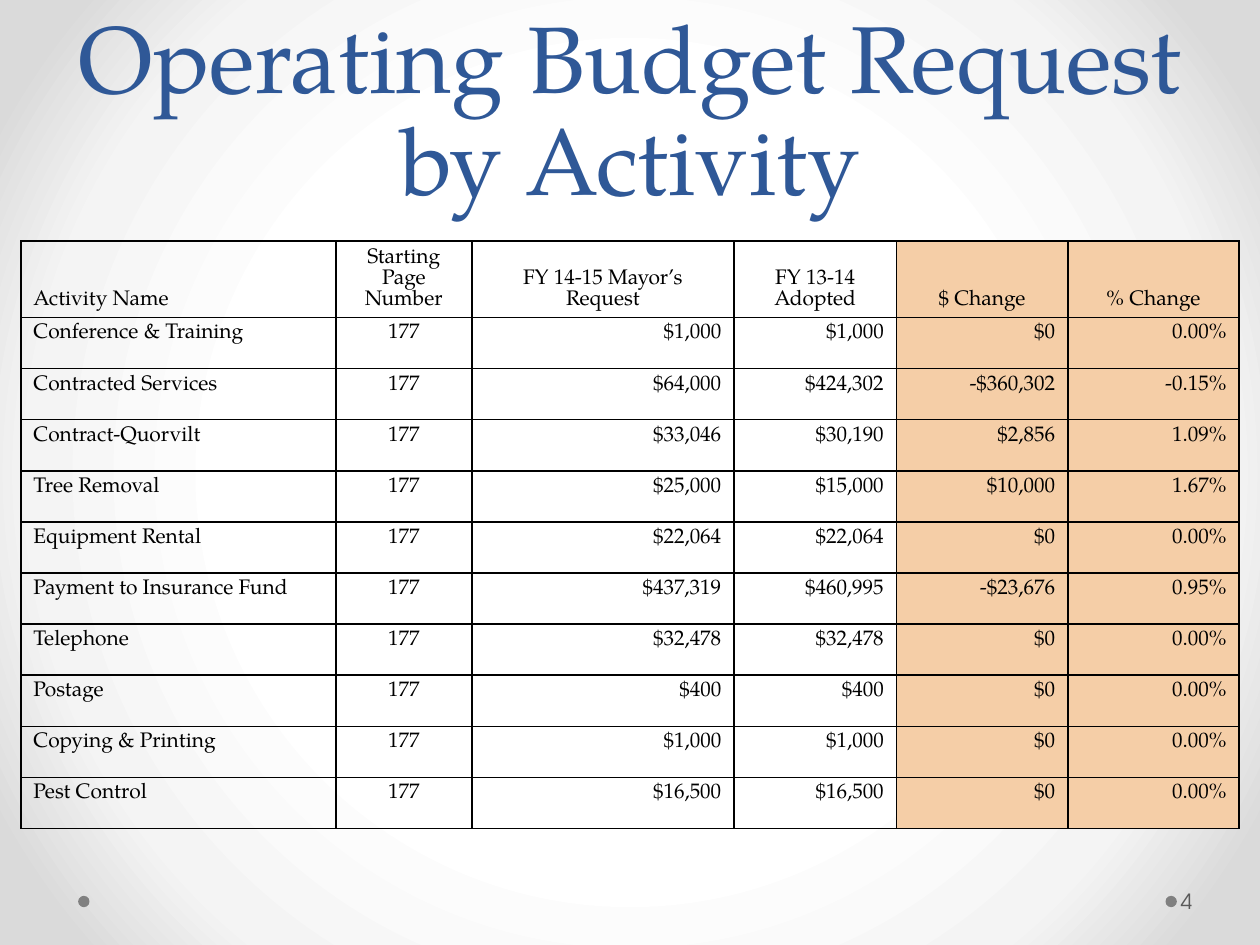
from dataclasses import dataclass

from lxml.etree import SubElement
from pptx import Presentation
from pptx.dml.color import RGBColor
from pptx.enum.shapes import MSO_SHAPE as Shape
from pptx.enum.text import MSO_ANCHOR as Anchor, PP_ALIGN as Align
from pptx.oxml import parse_xml
from pptx.oxml.ns import nsdecls, qn
from pptx.util import Inches, Pt

WIDTH, HEIGHT = Inches(10), Inches(7.5)
SERIF, SANS = "TeX Gyre Pagella", "TeX Gyre Adventor"
BLACK, BLUE, PEACH, GREY, DARK_GREY = "000000", "2F5897", "F5CEA7", "808080", "595959"
BACKDROP = [(50, "FFFFFF"), (76, "F4F4F4"), (92, "DADADA")]
START_PAGE = "177"
HEADER_ROW, BODY_ROW = 8.1, 5.41


@dataclass(frozen=True)
class Column:
    heading: str
    share: float
    heading_align: Align
    align: Align
    fill: str | None = None


@dataclass(frozen=True)
class Activity:
    name: str
    request: str
    adopted: str
    change: str = "$0"
    percent: str = "0.00%"

    def cells(self) -> list[str]:
        return [self.name, START_PAGE, self.request, self.adopted, self.change, self.percent]


COLUMNS = [
    Column("Activity Name", 25, Align.LEFT, Align.LEFT),
    Column("Starting Page Number", 10.8, Align.CENTER, Align.CENTER),
    Column("FY 14-15 Mayor’s Request", 20.8, Align.CENTER, Align.RIGHT),
    Column("FY 13-14 Adopted", 12.9, Align.CENTER, Align.RIGHT),
    Column("$ Change", 13.6, Align.CENTER, Align.RIGHT, PEACH),
    Column("% Change", 13.6, Align.CENTER, Align.RIGHT, PEACH),
]
ACTIVITIES = [
    Activity("Conference & Training", "$1,000", "$1,000"),
    Activity("Contracted Services", "$64,000", "$424,302", "-$360,302", "-0.15%"),
    Activity("Contract-Quorvilt", "$33,046", "$30,190", "$2,856", "1.09%"),
    Activity("Tree Removal", "$25,000", "$15,000", "$10,000", "1.67%"),
    Activity("Equipment Rental", "$22,064", "$22,064"),
    Activity("Payment to Insurance Fund", "$437,319", "$460,995", "-$23,676", "0.95%"),
    Activity("Telephone", "$32,478", "$32,478"),
    Activity("Postage", "$400", "$400"),
    Activity("Copying & Printing", "$1,000", "$1,000"),
    Activity("Pest Control", "$16,500", "$16,500"),
]


def across(percent: float) -> int:
    return round(WIDTH * percent / 100)


def down(percent: float) -> int:
    return round(HEIGHT * percent / 100)


def color(value: str) -> RGBColor:
    return RGBColor.from_string(value)


def write(frame, text: str, size: float, font: str, shade: str,
          align: Align = Align.LEFT, spacing: float | None = None) -> None:
    frame.text = text
    frame.word_wrap = True
    para = frame.paragraphs[0]
    para.alignment = align
    if spacing:
        para.line_spacing = Pt(spacing)
    for span in para.runs:
        span.font.size, span.font.name = Pt(size), font
        span.font.color.rgb = color(shade)


def paint_backdrop(page) -> None:
    """Fill the background with a gradient spreading from the centre."""
    page.background.fill.gradient()
    gradient = page.element.find(".//" + qn("a:gradFill"))
    stops = "".join(f'<a:gs pos="{place * 1000}"><a:srgbClr val="{shade}"/></a:gs>'
                    for place, shade in BACKDROP)
    gradient.getparent().replace(gradient, parse_xml(
        f'<a:gradFill {nsdecls("a")} rotWithShape="1"><a:gsLst>{stops}</a:gsLst>'
        '<a:path path="circle"><a:fillToRect l="50000" t="50000" r="50000" b="50000"/>'
        '</a:path></a:gradFill>'))


def add_dot(page, left: float) -> None:
    size = Inches(0.09)
    dot = page.shapes.add_shape(Shape.OVAL, across(left), down(94.8), size, size)
    dot.shadow.inherit = False
    dot.fill.solid()
    dot.fill.fore_color.rgb = color(GREY)
    dot.line.fill.background()


def add_title(page, text: str) -> None:
    title = page.shapes.title
    title.left, title.top, title.width, title.height = across(5), 0, across(90), Inches(1.75)
    title.text_frame.vertical_anchor = Anchor.BOTTOM
    write(title.text_frame, text, 54, SERIF, BLUE, Align.CENTER, 58)


def style_cell(cell, text: str, align: Align, fill: str | None, anchor: Anchor) -> None:
    write(cell.text_frame, text, 12, SERIF, BLACK, align, 12)
    cell.vertical_anchor = anchor
    properties = cell._tc.get_or_add_tcPr()
    for side in ("a:lnL", "a:lnR", "a:lnT", "a:lnB"):
        line = SubElement(properties, qn(side), w=str(Pt(1)))
        SubElement(SubElement(line, qn("a:solidFill")), qn("a:srgbClr"), val=BLACK)
    if fill:
        cell.fill.solid()
        cell.fill.fore_color.rgb = color(fill)
    else:
        cell.fill.background()


def add_budget_table(page) -> None:
    heights = [HEADER_ROW] + [BODY_ROW] * len(ACTIVITIES)
    table = page.shapes.add_table(
        len(heights), len(COLUMNS), across(1.65), down(25.5),
        across(sum(column.share for column in COLUMNS)), down(sum(heights))).table
    table.first_row = table.horz_banding = False
    for row, height in zip(table.rows, heights):
        row.height = down(height)
    for place, column in enumerate(COLUMNS):
        table.columns[place].width = across(column.share)
        style_cell(table.cell(0, place), column.heading, column.heading_align,
                   column.fill, Anchor.BOTTOM)
        for line, activity in enumerate(ACTIVITIES, 1):
            style_cell(table.cell(line, place), activity.cells()[place], column.align,
                       column.fill, Anchor.TOP)


def add_page_number(page, number: str) -> None:
    box = page.shapes.add_textbox(across(93.4), down(92.7), across(6.1), down(5.3))
    frame = box.text_frame
    frame.margin_left, frame.margin_right = Inches(0.03), Inches(0.05)
    frame.vertical_anchor = Anchor.MIDDLE
    write(frame, number, 12, SANS, DARK_GREY)


def main() -> None:
    deck = Presentation()
    deck.slide_width, deck.slide_height = WIDTH, HEIGHT
    page = deck.slides.add_slide(deck.slide_layouts[5])
    paint_backdrop(page)
    for left in (92.5, 6.2):
        add_dot(page, left)
    add_title(page, "Operating Budget Request by Activity")
    add_budget_table(page)
    add_page_number(page, "4")
    deck.save("out.pptx")


if __name__ == "__main__":
    main()
